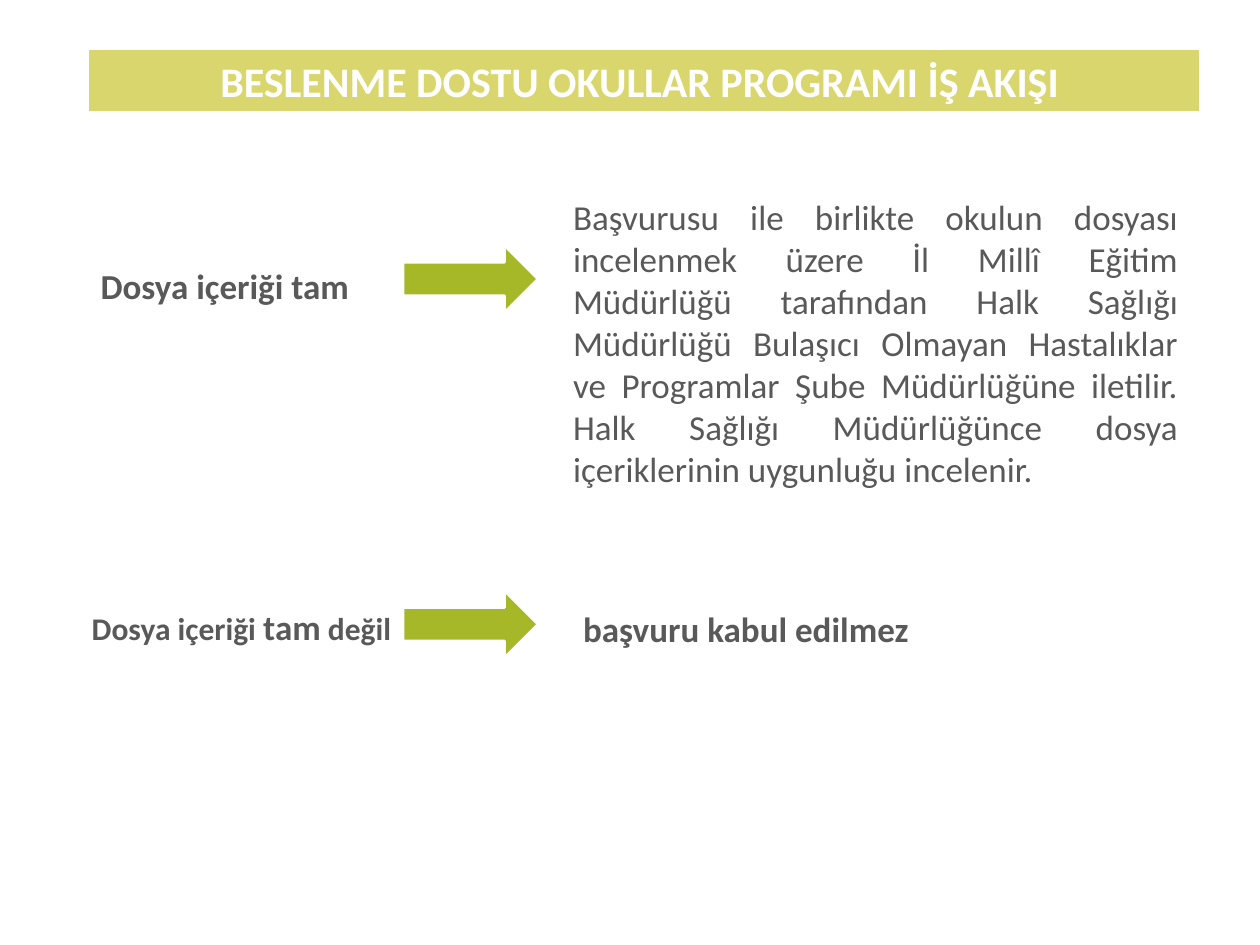
from dataclasses import dataclass

from pptx import Presentation
from pptx import util as u
from pptx.dml.color import RGBColor
from pptx.enum import shapes, text


@dataclass(frozen=True)
class Theme:
    font: str = "Calibri"
    ink: RGBColor = RGBColor(0x59, 0x59, 0x59)
    white: RGBColor = RGBColor(0xFF, 0xFF, 0xFF)
    arrow: RGBColor = RGBColor(0xA6, 0xB7, 0x27)
    banner: RGBColor = RGBColor(0xD9, 0xD6, 0x6D)
    title_size: int = 24
    body_size: int = 20
    small_size: int = 18
    outline: float = 1.5


theme = Theme()
presentation = Presentation()
presentation.slide_width, presentation.slide_height = u.Inches(10), u.Inches(7.5)
slide = presentation.slides.add_slide(presentation.slide_layouts[6])

# The grid has 100 columns and 75 rows of equal size
column = presentation.slide_width / 100
row = presentation.slide_height / 75


def cells(left, top, width, height):
    return [round(n) for n in (left * column, top * row, width * column, height * row)]


def write(shape, runs, alignment, color=theme.ink):
    """Fill the shape with one paragraph of (words, size, bold) runs."""
    frame = shape.text_frame
    frame.word_wrap = True
    paragraph = frame.paragraphs[0]
    paragraph.alignment = alignment
    for words, size, bold in runs:
        run = paragraph.add_run()
        run.text = words
        run.font.name = theme.font
        run.font.size = u.Pt(size)
        run.font.bold = bold
        run.font.color.rgb = color


left, center, justify = (text.PP_ALIGN.LEFT, text.PP_ALIGN.CENTER, text.PP_ALIGN.JUSTIFY)
small, body = theme.small_size, theme.body_size

# Banner and the two arrows
rectangle, right_arrow = shapes.MSO_SHAPE.RECTANGLE, shapes.MSO_SHAPE.RIGHT_ARROW
blocks = [
    (rectangle, (7, 3.9, 88.3, 5), theme.banner),
    (right_arrow, (32, 19.5, 10.7, 5.3), theme.arrow),
    (right_arrow, (32, 46.9, 10.7, 5.3), theme.arrow),
]
drawn = []
for preset, place, fill in blocks:
    shape = slide.shapes.add_shape(preset, *cells(*place))
    shape.shadow.inherit = False
    shape.fill.solid()
    shape.fill.fore_color.rgb = fill
    shape.line.color.rgb = theme.white
    shape.line.width = u.Pt(theme.outline)
    drawn.append(shape)

write(drawn[0], [("BESLENME DOSTU OKULLAR PROGRAMI İŞ AKIŞI ", theme.title_size, True)],
      center, theme.white)

# Conditions on the left, outcomes on the right
explanation = (
    "Başvurusu ile birlikte okulun dosyası incelenmek üzere İl Millî Eğitim Müdürlüğü "
    "tarafından Halk Sağlığı Müdürlüğü Bulaşıcı Olmayan Hastalıklar ve Programlar Şube "
    "Müdürlüğüne iletilir. Halk Sağlığı Müdürlüğünce dosya içeriklerinin uygunluğu incelenir."
)
notes = [
    ((7, 20.5, 25, 4.4), [("Dosya içeriği tam", body, True)], left),
    ((44.5, 15, 50, 24.6), [(explanation, body, False)], justify),
    ((6.3, 47.6, 27, 4.4),
     [("Dosya içeriği ", small, True), ("tam", body, True), (" değil", small, True)], left),
    ((45.3, 47.7, 30.4, 4.4), [("başvuru kabul edilmez", body, True)], left),
]
for place, runs, alignment in notes:
    write(slide.shapes.add_textbox(*cells(*place)), runs, alignment)

presentation.save("out.pptx")
